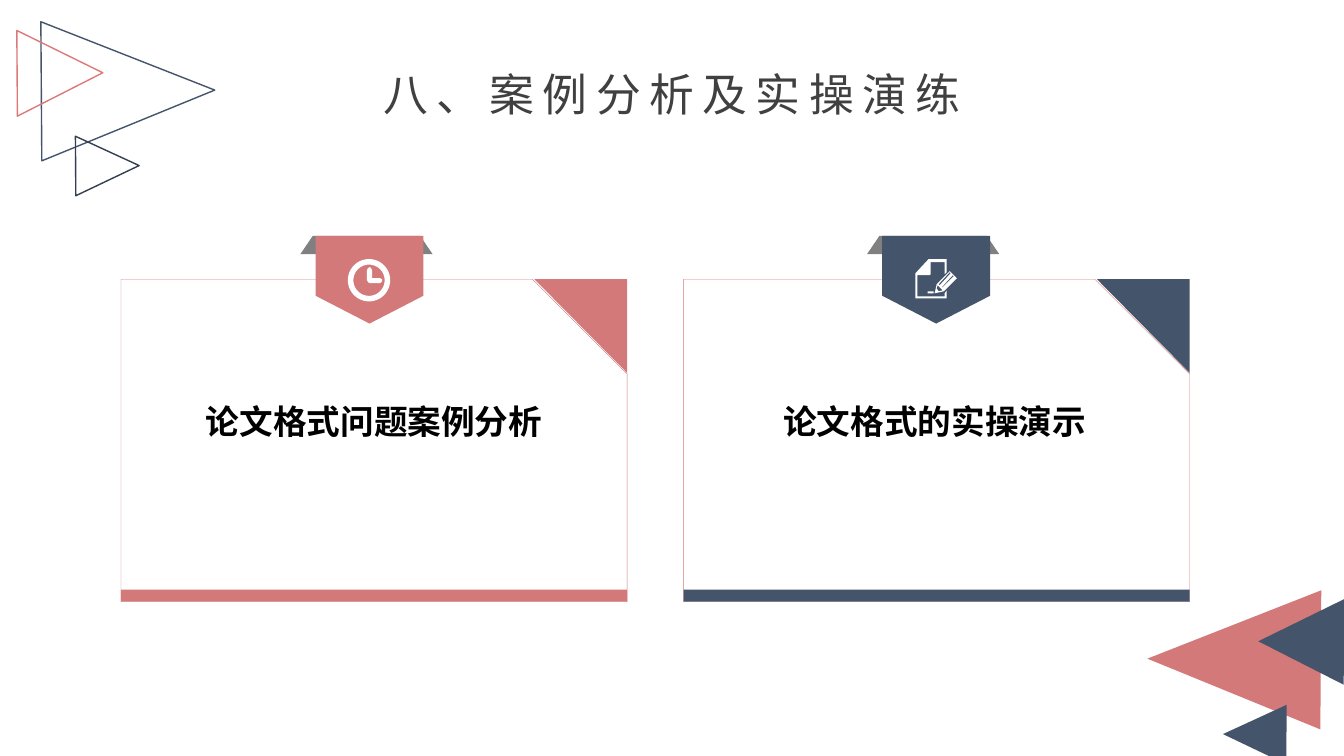
from math import cos, pi, sin

from lxml.etree import SubElement
from pptx import Presentation
from pptx.dml.color import RGBColor
from pptx.enum.shapes import MSO_SHAPE
from pptx.enum.text import MSO_ANCHOR, MSO_AUTO_SIZE, PP_ALIGN
from pptx.oxml.ns import qn
from pptx.util import Inches, Pt

ROSE = RGBColor(0xD3, 0x79, 0x79)
ROSE_OUTLINE = RGBColor(0xDD, 0x79, 0x79)
NAVY = RGBColor(0x44, 0x54, 0x6A)
NAVY_DARK = RGBColor(0x33, 0x3F, 0x50)
GRAY = RGBColor(0x80, 0x80, 0x80)
TITLE_GRAY = RGBColor(0x40, 0x40, 0x40)
BLACK = RGBColor(0, 0, 0)
WHITE = RGBColor(0xFF, 0xFF, 0xFF)


def write_text(frame, text, size, color, font="Noto Sans CJK JP", bold=False, spacing=0):
    """Put one centred, formatted line into a text frame."""
    paragraph = frame.paragraphs[0]
    paragraph.alignment = PP_ALIGN.CENTER
    run = paragraph.add_run()
    run.text = text
    run.font.size = Pt(size)
    run.font.bold = bold
    run.font.color.rgb = color
    run.font.name = font
    properties = run._r.get_or_add_rPr()
    SubElement(properties, qn("a:ea")).set("typeface", font)
    if spacing:
        properties.set("spc", str(spacing * 100))


def circle(center_x, center_y, radius, steps=48):
    angles = [2 * pi * step / steps for step in range(steps)]
    return [(center_x + radius * cos(a), center_y + radius * sin(a)) for a in angles]


class SlideBuilder:
    def __init__(self, slide):
        self.shapes = slide.shapes

    def paint(self, shape, fill=None, line=None, line_width=1):
        shape.shadow.inherit = False
        if fill is None:
            shape.fill.background()
        else:
            shape.fill.solid()
            shape.fill.fore_color.rgb = fill
        if line is None:
            shape.line.fill.background()
        else:
            shape.line.color.rgb = line
            shape.line.width = Pt(line_width)

    def preset(self, kind, box, adjustment=None, rotation=0, **style):
        shape = self.shapes.add_shape(kind, *map(Inches, box))
        shape.rotation = rotation
        if adjustment is not None:
            shape.adjustments[0] = adjustment
        self.paint(shape, **style)

    def outline(self, contours, fill):
        """Draw closed contours as one shape; inner contours become holes."""
        contours = [[(Inches(x), Inches(y)) for x, y in points] for points in contours]
        builder = self.shapes.build_freeform(*contours[0][0])
        for index, points in enumerate(contours):
            if index:
                builder.move_to(*points[0])
            builder.add_line_segments(points[1:], close=True)
        self.paint(builder.convert_to_shape(), fill=fill)

    def text(self, box, text, margin=None, anchor=MSO_ANCHOR.TOP, **style):
        frame = self.shapes.add_textbox(*map(Inches, box)).text_frame
        frame.word_wrap = True
        frame.auto_size = MSO_AUTO_SIZE.SHAPE_TO_FIT_TEXT
        frame.vertical_anchor = anchor
        if margin is not None:
            frame.margin_left = frame.margin_right = Inches(margin)
            frame.margin_top = frame.margin_bottom = Inches(margin)
        write_text(frame, text, **style)

    def card(self, left, color):
        top, width, height = 2.77, 5.02, 3.2
        right = left + width
        self.preset(MSO_SHAPE.SNIP_1_RECTANGLE, (left, top, width, height), 0.294,
                    fill=WHITE, line=ROSE, line_width=0.25)
        self.preset(MSO_SHAPE.RECTANGLE, (left, 5.85, width, 0.12), fill=color)
        self.outline([[(right, top), (right - 0.92, top), (right, top + 0.93)]], color)

    def ribbon(self, left, color):
        self.preset(MSO_SHAPE.TRAPEZOID, (left, 2.34, 1.31, 0.18), 0.679, fill=GRAY)
        self.preset(MSO_SHAPE.PENTAGON, (left + 0.25, 2.24, 0.87, 1.07), 0.317,
                    rotation=90, fill=color)

    def clock_icon(self, x, y):
        hands = [(3.64, 2.68), (3.65, 2.66), (3.67, 2.65), (3.68, 2.66), (3.69, 2.68),
                 (3.69, 2.76), (3.77, 2.76), (3.79, 2.77), (3.79, 2.79), (3.77, 2.81),
                 (3.67, 2.81), (3.65, 2.8), (3.64, 2.78)]
        self.outline([circle(x, y, 0.21), circle(x, y, 0.155), hands], WHITE)

    def document_icon(self):
        signature = [(9.2, 2.89), (9.26, 2.89), (9.26, 2.91), (9.2, 2.91)]
        pencil = [(9.36, 2.89), (9.27, 2.91), (9.29, 2.82), (9.42, 2.69), (9.49, 2.76)]
        lower_groove = [(9.35, 2.85), (9.46, 2.74), (9.45, 2.73), (9.34, 2.85)]
        tip = [(9.35, 2.88), (9.31, 2.89), (9.29, 2.86), (9.3, 2.83)]
        upper_groove = [(9.32, 2.83), (9.43, 2.71), (9.42, 2.7), (9.31, 2.82)]
        page = [(9.08, 2.96), (9.39, 2.96), (9.39, 2.88), (9.37, 2.91), (9.37, 2.94),
                (9.1, 2.94), (9.1, 2.73), (9.22, 2.73), (9.23, 2.72), (9.23, 2.6),
                (9.37, 2.6), (9.37, 2.72), (9.39, 2.7), (9.39, 2.57), (9.21, 2.57),
                (9.08, 2.71)]
        self.outline([signature, pencil, lower_groove, tip, upper_groove, page], WHITE)


def main():
    presentation = Presentation()
    presentation.slide_width = Inches(13.33)
    presentation.slide_height = Inches(7.5)
    builder = SlideBuilder(presentation.slides.add_slide(presentation.slide_layouts[6]))

    # Corner triangles: solid at bottom right, outlined at top left
    for box, color in [((11.55, 5.68, 1.38, 1.72), ROSE),
                       ((12.15, 6.97, 0.59, 0.63), NAVY),
                       ((12.48, 5.94, 0.85, 0.85), NAVY)]:
        builder.preset(MSO_SHAPE.ISOSCELES_TRIANGLE, box, rotation=270.4, fill=color)
    for box, color in [((0.58, 0.04, 1.38, 1.72), NAVY),
                       ((0.77, 1.33, 0.59, 0.63), NAVY_DARK),
                       ((0.17, 0.3, 0.85, 0.85), ROSE_OUTLINE)]:
        builder.preset(MSO_SHAPE.ISOSCELES_TRIANGLE, box, rotation=89.6, line=color)

    # Title
    builder.text((3.13, 0.66, 7.07, 0.54), "八、案例分析及实操演练", margin=0,
                 anchor=MSO_ANCHOR.MIDDLE, size=32, color=TITLE_GRAY, spacing=6)

    # Cards with ribbons
    for card_left, text_left, ribbon_left, color, caption in [
            (1.2, 1.86, 2.98, ROSE, "论文格式问题案例分析"),
            (6.78, 7.42, 8.6, NAVY, "论文格式的实操演示")]:
        builder.card(card_left, color)
        builder.text((text_left, 3.93, 3.7, 0.5), caption, size=24, color=BLACK, bold=True)
        builder.ribbon(ribbon_left, color)

    # Ribbon icons
    builder.clock_icon(3.66, 2.78)
    builder.document_icon()

    presentation.save("out.pptx")


if __name__ == "__main__":
    main()
